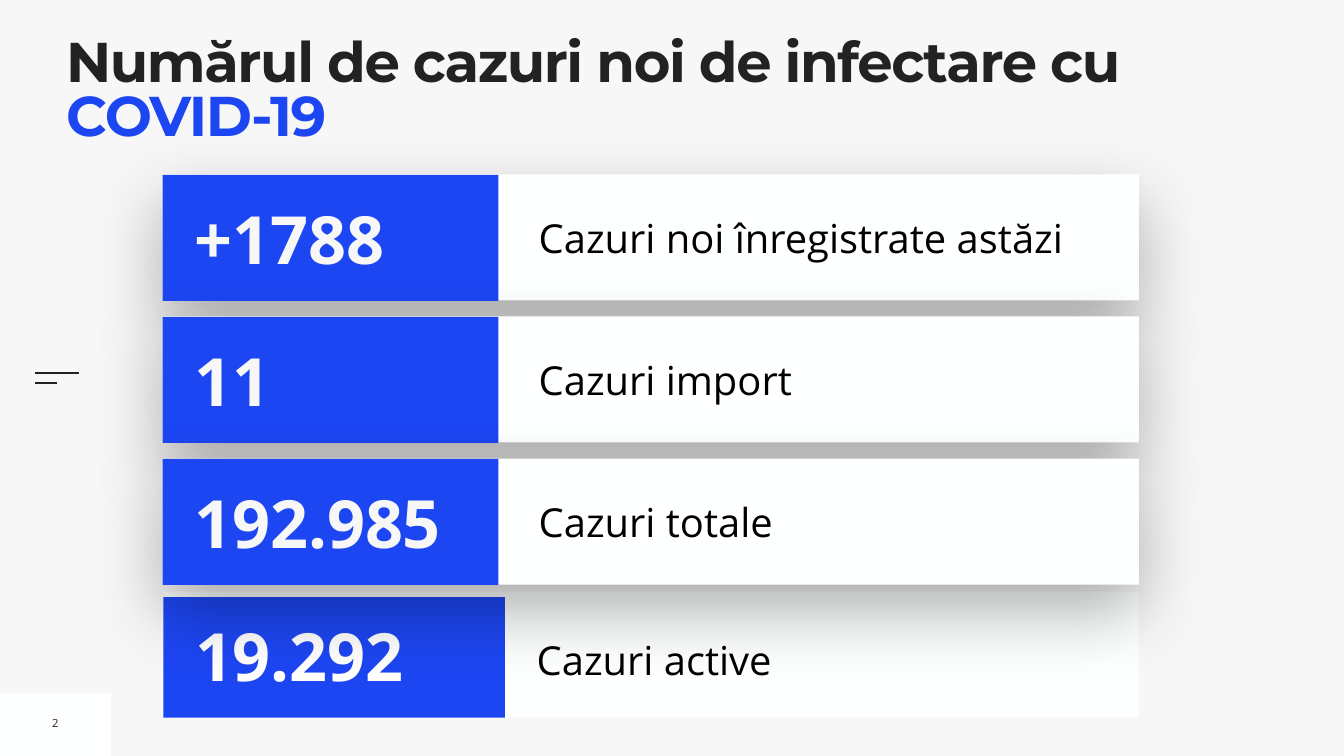
from dataclasses import dataclass

from lxml.etree import SubElement
from pptx import Presentation
from pptx.dml.color import RGBColor
from pptx.enum.shapes import MSO_CONNECTOR, MSO_SHAPE
from pptx.enum.text import MSO_ANCHOR, MSO_AUTO_SIZE, PP_ALIGN
from pptx.oxml import parse_xml
from pptx.oxml.ns import nsdecls, qn
from pptx.util import Cm, Pt


@dataclass(frozen=True)
class Theme:
    background: RGBColor = RGBColor.from_string("F7F7F7")
    card: RGBColor = RGBColor.from_string("FEFFFF")
    accent: RGBColor = RGBColor.from_string("1D46F3")
    ink: RGBColor = RGBColor.from_string("222222")
    label: RGBColor = RGBColor.from_string("000000")
    bright: RGBColor = RGBColor.from_string("FFFFFF")
    heading_font: str = "Montserrat"
    body_font: str = "Open Sans"
    title_size: Pt = Pt(80)
    value_size: Pt = Pt(95)
    label_size: Pt = Pt(57)
    page_size: Pt = Pt(16)


theme = Theme()


def add_block(shapes, left, top, width, height, color):
    block = shapes.add_shape(MSO_SHAPE.RECTANGLE, Cm(left), Cm(top), Cm(width), Cm(height))
    block.shadow.inherit = False
    block.fill.solid()
    block.fill.fore_color.rgb = color
    block.line.fill.background()
    return block


def add_text(shapes, text, left, top, width, height, size, color, bold=False, inset=0.25):
    box = shapes.add_textbox(Cm(left), Cm(top), Cm(width), Cm(height))
    frame = box.text_frame
    frame.word_wrap = True
    frame.vertical_anchor = MSO_ANCHOR.MIDDLE
    frame.margin_left = frame.margin_right = Cm(inset)
    frame.margin_top = frame.margin_bottom = Cm(inset)
    paragraph = frame.paragraphs[0]
    paragraph.text = text
    paragraph.font.name = theme.body_font
    paragraph.font.size = size
    paragraph.font.bold = bold
    paragraph.font.color.rgb = color
    return frame


deck = Presentation()
deck.slide_width, deck.slide_height = Cm(67.73), Cm(38.1)
slide = deck.slides.add_slide(deck.slide_layouts[5])
slide.background.fill.solid()
slide.background.fill.fore_color.rgb = theme.background

add_block(slide.shapes, 0, 34.95, 5.59, 3.15, theme.card)
for dash_end, dash_y in [(3.99, 18.82), (2.87, 19.28)]:
    dash = slide.shapes.add_connector(
        MSO_CONNECTOR.STRAIGHT, Cm(1.75), Cm(dash_y), Cm(dash_end), Cm(dash_y))
    dash.line.color.rgb = theme.ink
    dash.line.width = Pt(3)
    SubElement(dash._element.spPr, qn("a:effectLst"))

page_number = add_text(slide.shapes, "2", 2.36, 35.79, 0.86, 1.3, theme.page_size, theme.ink)
page_number.word_wrap = False
page_number.paragraphs[0].alignment = PP_ALIGN.CENTER

title = slide.shapes.title
title.left, title.top, title.width, title.height = Cm(3.33), Cm(1.98), Cm(60.81), Cm(4.01)
heading = title.text_frame
heading.word_wrap = True
heading.auto_size = MSO_AUTO_SIZE.NONE
heading.vertical_anchor = MSO_ANCHOR.TOP
heading.margin_left = heading.margin_right = heading.margin_top = heading.margin_bottom = 0
headline = heading.paragraphs[0]
headline.alignment = PP_ALIGN.LEFT
headline.line_spacing = 0.8
headline.font.name = theme.heading_font
headline.font.size = theme.title_size
headline.font.bold = True
for words, color in [("Numărul de cazuri noi de infectare cu ", theme.ink),
                     ("COVID-19", theme.accent)]:
    run = headline.add_run()
    run.text = words
    run.font.color.rgb = color
    run._r.get_or_add_rPr().set("spc", "-200")

active = slide.shapes.add_group_shape().shapes
add_block(active, 8.23, 29.82, 49.15, 6.35, theme.card)
active_label = add_text(active, "Cazuri active", 27.05, 31.29, 29.41, 3.18,
                        theme.label_size, theme.label, inset=0)
active_label.paragraphs[0].line_spacing = 1.3
add_block(active, 8.23, 30.1, 17.22, 6.07, theme.accent)
add_text(active, "19.292", 9.58, 30.71, 15.32, 4.57, theme.value_size, theme.bright, bold=True)

first_top, row_pitch = 8.79, 7.16
statistics = [("+1788", "Cazuri noi înregistrate astăzi"),
              ("11", "Cazuri import"),
              ("192.985", "Cazuri totale")]
for index, (value, label) in enumerate(statistics):
    top = first_top + index * row_pitch
    row = slide.shapes.add_group_shape().shapes
    card = add_block(row, 8.2, top, 49.2, 6.35, theme.card)
    card._element.spPr.find(qn("a:effectLst")).append(parse_xml(
        f'<a:outerShdw {nsdecls("a")} blurRad="{Pt(100)}" dist="{Pt(40)}" dir="5400000" '
        'rotWithShape="0"><a:srgbClr val="000000"><a:alpha val="30000"/></a:srgbClr>'
        '</a:outerShdw>'))
    add_text(row, label, 26.9, top + 1.7, 29.87, 2.95, theme.label_size, theme.label)
    add_block(row, 8.2, top + 0.02, 16.92, 6.35, theme.accent)
    add_text(row, value, 9.55, top + 0.89, 15.32, 4.57,
             theme.value_size, theme.background, bold=True)

deck.save("out.pptx")
